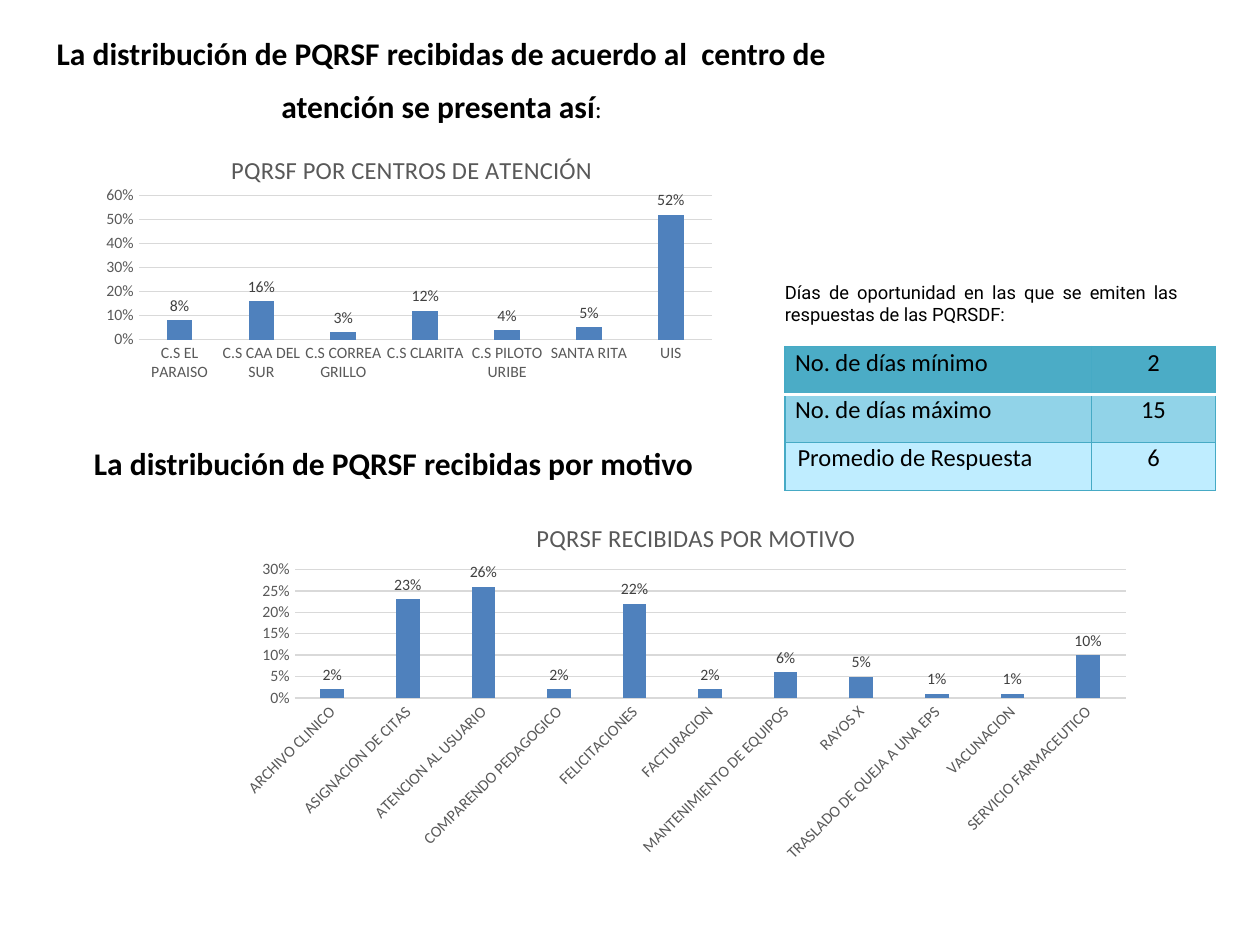
from dataclasses import dataclass

from lxml import etree
from pptx import Presentation
from pptx.chart.data import CategoryChartData
from pptx.dml.color import RGBColor
from pptx.enum.chart import XL_CHART_TYPE, XL_LABEL_POSITION, XL_TICK_MARK
from pptx.enum.text import PP_ALIGN
from pptx.oxml import parse_xml
from pptx.oxml.ns import nsdecls, qn
from pptx.util import Inches, Pt

CENTER, LEFT, JUSTIFY = PP_ALIGN.CENTER, PP_ALIGN.LEFT, PP_ALIGN.JUSTIFY
COLUMNS = XL_CHART_TYPE.COLUMN_CLUSTERED
OUTSIDE = XL_LABEL_POSITION.OUTSIDE_END
NO_TICKS = XL_TICK_MARK.NONE

COLORS = {
    "text": "000000", "axis": "595959", "label": "404040", "grid": "D9D9D9",
    "bar": "4F81BD", "border": "46AAC5", "rule": "FFFFFF",
    "row_min": "4BACC6", "row_max": "91D3E8", "row_mean": "BFEDFF",
}


@dataclass
class Run:
    text: str
    size: float
    bold: bool = False
    font: str = "Calibri"


@dataclass
class TextBlock:
    box: tuple
    runs: list
    align: PP_ALIGN = CENTER
    top_inset: float = 0.02
    right_inset: float = 0
    line_points: float | None = None


@dataclass
class ResponseRow:
    label: str
    days: str
    fill: str
    indent: float = 0.08


@dataclass
class BarChart:
    title: str
    box: tuple
    shares: dict
    top: float
    step: float
    title_at: tuple
    plot_at: tuple
    label_angle: int = 0


TEXTS = [
    TextBlock((0.17, 0.08, 6.67, 0.91), [
        Run("La distribución de PQRSF recibidas de acuerdo al  centro de "
            "atención se presenta así", 18, True),
        Run(":", 14)], top_inset=0.07, line_points=30.3),
    TextBlock((0.5, 3.5, 5.25, 0.62), [
        Run("La distribución de PQRSF recibidas por motivo", 18, True)]),
    TextBlock((6.23, 2.17, 3.75, 0.41), [
        Run("Días de oportunidad en las que se emiten las respuestas de "
            "las PQRSDF:", 10.5, font="Roboto")],
        JUSTIFY, top_inset=0.06, right_inset=0.63),
]

RESPONSES = [
    ResponseRow("No. de días mínimo", "2", "row_min"),
    ResponseRow("No. de días máximo", "15", "row_max"),
    ResponseRow("Promedio de Respuesta", "6", "row_mean", 0.1),
]

CHARTS = [
    BarChart("PQRSF POR CENTROS DE ATENCIÓN", (0.75, 0.99, 5, 2.08), {
        "C.S EL PARAISO": 0.08, "C.S CAA DEL SUR": 0.16,
        "C.S CORREA GRILLO": 0.03, "C.S CLARITA": 0.12,
        "C.S PILOTO URIBE": 0.04, "SANTA RITA": 0.05, "UIS": 0.52,
    }, 0.6, 0.1, (0.21, 0.09), (0.07, 0.27, 0.91, 0.55)),
    BarChart("PQRSF RECIBIDAS POR MOTIVO", (1.83, 3.92, 7.25, 3), {
        "ARCHIVO CLINICO": 0.02, "ASIGNACION DE CITAS": 0.23,
        "ATENCION AL USUARIO": 0.26, "COMPARENDO PEDAGOGICO": 0.02,
        "FELICITACIONES": 0.22, "FACTURACION": 0.02,
        "MANTENIMIENTO DE EQUIPOS": 0.06, "RAYOS X": 0.05,
        "TRASLADO DE QUEJA A UNA EPS": 0.01, "VACUNACION": 0.01,
        "SERVICIO FARMACEUTICO": 0.1,
    }, 0.3, 0.05, (0.33, 0.06), (0.07, 0.2, 0.91, 0.34), -45),
]


def rgb(key: str) -> RGBColor:
    return RGBColor.from_string(COLORS[key])


def set_font(font, size: float, color: str, name: str = "Calibri", bold: bool = False) -> None:
    font.name, font.size, font.bold = name, Pt(size), bold
    font.color.rgb = rgb(color)


def add_run(paragraph, run: Run) -> None:
    added = paragraph.add_run()
    added.text = run.text
    set_font(added.font, run.size, "text", run.font, run.bold)


def add_text(slide, block: TextBlock) -> None:
    frame = slide.shapes.add_textbox(*map(Inches, block.box)).text_frame
    frame.word_wrap = True
    frame.margin_left = frame.margin_bottom = 0
    frame.margin_top = Inches(block.top_inset)
    frame.margin_right = Inches(block.right_inset)
    paragraph = frame.paragraphs[0]
    paragraph.alignment = block.align
    if block.line_points:
        paragraph.line_spacing = Pt(block.line_points)
    for run in block.runs:
        add_run(paragraph, run)


def set_border(cell, side: str, color: str, points: float) -> None:
    """Append one cell border; call before filling, in the order L, R, T, B."""
    line = etree.SubElement(cell._tc.get_or_add_tcPr(), qn(f"a:ln{side}"), w=str(Pt(points)))
    fill = etree.SubElement(line, qn("a:solidFill"))
    etree.SubElement(fill, qn("a:srgbClr"), val=COLORS[color])


def add_response_table(slide, rows: list[ResponseRow]) -> None:
    box = map(Inches, (6.23, 2.75, 3.42, 1.13))
    table = slide.shapes.add_table(len(rows), 2, *box).table
    for column, width in zip(table.columns, (2.43, 0.99)):
        column.width = Inches(width)
    for r, row in enumerate(rows):
        table.rows[r].height = Inches(0.38)
        for c, (text, align, indent) in enumerate(
                [(row.label, LEFT, row.indent), (row.days, CENTER, 0)]):
            cell = table.cell(r, c)
            cell.margin_left, cell.margin_top = Inches(indent), Inches(0.01)
            cell.margin_right = cell.margin_bottom = 0
            for side in "LRTB":
                under_header = (r, side) in ((0, "B"), (1, "T"))
                set_border(cell, side, *(("rule", 2) if under_header else ("border", 0.75)))
            cell.fill.solid()
            cell.fill.fore_color.rgb = rgb(row.fill)
            paragraph = cell.text_frame.paragraphs[0]
            paragraph.alignment = align
            add_run(paragraph, Run(text, 14))


def manual_layout(position: tuple, inner: bool = False):
    """Layout element from x, y and optional width, height as chart fractions."""
    target = '<c:layoutTarget val="inner"/>' if inner else ""
    modes = '<c:xMode val="edge"/><c:yMode val="edge"/>'
    values = "".join(f'<c:{tag} val="{v}"/>' for tag, v in zip("xywh", position))
    return parse_xml(f'<c:layout {nsdecls("c")}><c:manualLayout>{target}{modes}'
                     f'{values}</c:manualLayout></c:layout>')


def place(parent, layout, index: int) -> None:
    for old in parent.findall(qn("c:layout")):
        parent.remove(old)
    parent.insert(index, layout)


def add_bar_chart(slide, spec: BarChart) -> None:
    data = CategoryChartData(number_format="0%")
    data.categories = list(spec.shares)
    data.add_series("Series 1", list(spec.shares.values()))
    chart = slide.shapes.add_chart(COLUMNS, *map(Inches, spec.box), data).chart
    set_font(chart.font, 10, "text")
    chart.has_legend = False
    title = chart.chart_title
    heading = title.text_frame.paragraphs[0].add_run()
    heading.text = spec.title
    set_font(heading.font, 14, "axis")
    place(title._element, manual_layout(spec.title_at), 1)
    place(chart._chartSpace.chart.plotArea, manual_layout(spec.plot_at, True), 0)

    categories, values = chart.category_axis, chart.value_axis
    for axis in (categories, values):
        axis.major_tick_mark = axis.minor_tick_mark = NO_TICKS
        set_font(axis.tick_labels.font, 9, "axis")
    body = categories.tick_labels.font._element.getparent().getparent().getparent()
    body.find(qn("a:bodyPr")).set("rot", str(spec.label_angle * 60000))
    values.minimum_scale, values.maximum_scale = 0, spec.top
    values.major_unit = spec.step
    values.tick_labels.number_format = "0%"
    values.tick_labels.number_format_is_linked = False
    values.format.line.fill.background()
    for line in (categories.format.line, values.major_gridlines.format.line):
        line.color.rgb, line.width = rgb("grid"), Pt(0.75)

    plot = chart.plots[0]
    plot.gap_width, plot.overlap, plot.vary_by_categories = 219, -27, False
    bars = plot.series[0].format
    bars.fill.solid()
    bars.fill.fore_color.rgb = rgb("bar")
    plot.has_data_labels = True
    labels = plot.data_labels
    labels.show_value, labels.position = True, OUTSIDE
    labels.number_format, labels.number_format_is_linked = "0%", False
    set_font(labels.font, 9, "label")


def main() -> None:
    deck = Presentation()
    deck.slide_width, deck.slide_height = Inches(10), Inches(7.5)
    slide = deck.slides.add_slide(deck.slide_layouts[6])
    for block in TEXTS:
        add_text(slide, block)
    add_response_table(slide, RESPONSES)
    for chart in CHARTS:
        add_bar_chart(slide, chart)
    deck.save("out.pptx")


if __name__ == "__main__":
    main()
